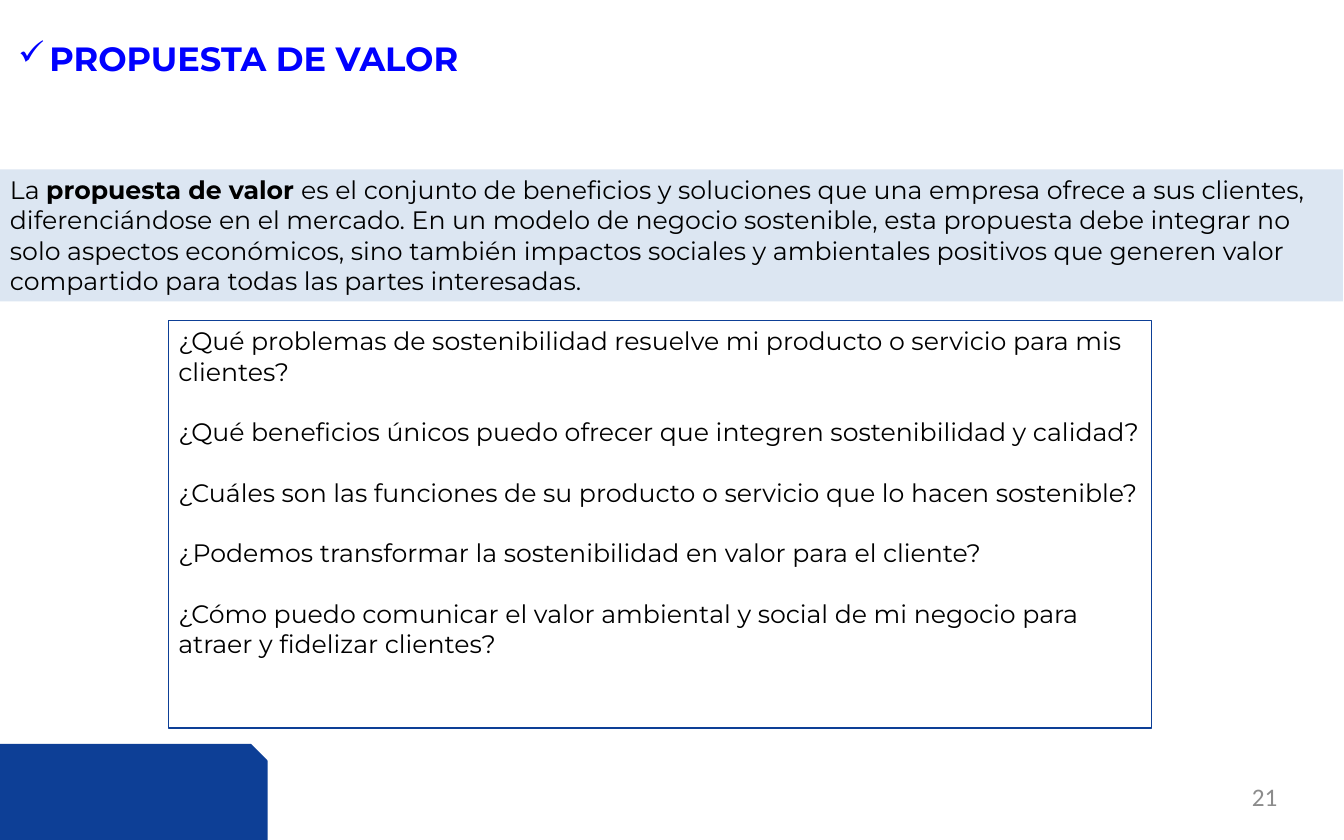
import pptx
import pptx.util
import pptx.dml.color
import pptx.enum.shapes
import pptx.enum.text
import pptx.oxml.ns
import lxml.etree

Inches = pptx.util.Inches
Pt = pptx.util.Pt
SHAPE = pptx.enum.shapes.MSO_SHAPE
ALIGN = pptx.enum.text.PP_ALIGN
TOP = pptx.enum.text.MSO_ANCHOR.TOP

COLORS = {"navy": "0D3F96", "title": "0000FF", "band": "DCE6F2",
          "text": "000000", "number": "8C8C8C"}
QUESTIONS = [
    "¿Qué problemas de sostenibilidad resuelve mi producto o servicio para mis clientes?",
    "¿Qué beneficios únicos puedo ofrecer que integren sostenibilidad y calidad?",
    "¿Cuáles son las funciones de su producto o servicio que lo hacen sostenible?",
    "¿Podemos transformar la sostenibilidad en valor para el cliente?",
    "¿Cómo puedo comunicar el valor ambiental y social de mi negocio para atraer y fidelizar clientes?",
]
DEFINITION = [
    ("La ", False),
    ("propuesta de valor ", True),
    ("es el conjunto de beneficios y soluciones que una empresa ofrece a sus clientes, "
     "diferenciándose en el mercado. En un modelo de negocio sostenible, esta propuesta "
     "debe integrar no solo aspectos económicos, sino también impactos sociales y "
     "ambientales positivos que generen valor compartido para todas las partes "
     "interesadas.", False),
]


def add_panel(kind, left, top, width, height, fill=None, line=None, weight=0.75):
    panel = slide.shapes.add_shape(kind, Inches(left), Inches(top), Inches(width), Inches(height))
    panel.shadow.inherit = False
    if fill:
        panel.fill.solid()
        panel.fill.fore_color.rgb = pptx.dml.color.RGBColor.from_string(COLORS[fill])
    else:
        panel.fill.background()
    if line:
        panel.line.color.rgb = pptx.dml.color.RGBColor.from_string(COLORS[line])
        panel.line.width = Pt(weight)
    else:
        panel.line.fill.background()
    panel.text_frame.word_wrap = True
    panel.text_frame.vertical_anchor = TOP
    return panel


def style_run(run, size=18, color="text", bold=False, font="Montserrat"):
    run.font.name = font
    run.font.size = Pt(size)
    run.font.bold = bold
    run.font.color.rgb = pptx.dml.color.RGBColor.from_string(COLORS[color])


prs = pptx.Presentation()
prs.slide_width = Inches(13.33)
prs.slide_height = Inches(8.33)
slide = prs.slides.add_slide(prs.slide_layouts[5])

# Title with check mark bullet
title = slide.shapes.title
title.left, title.top, title.width, title.height = (Inches(v) for v in (0.08, 0.33, 10.68, 0.5))
title.text_frame.text = "PROPUESTA DE VALOR"
title.text_frame.word_wrap = True
title.text_frame.vertical_anchor = TOP
heading = title.text_frame.paragraphs[0]
heading.alignment = ALIGN.LEFT
heading.space_after = Pt(18)
heading_props = heading._p.get_or_add_pPr()
heading_props.set("marL", str(Inches(0.31)))
heading_props.set("indent", str(-Inches(0.31)))
bullet = lxml.etree.SubElement(heading_props, pptx.oxml.ns.qn("a:buChar"))
bullet.set("char", "✓")
style_run(heading.runs[0], 24, "title", True)

# Page number and corner block
number = slide.shapes.add_textbox(Inches(9.6), Inches(7.75), Inches(3.07), Inches(0.42))
frame = number.text_frame
frame.word_wrap = True
frame.margin_left = frame.margin_right = frame.margin_top = frame.margin_bottom = 0
frame.text = "21"
frame.paragraphs[0].alignment = ALIGN.RIGHT
style_run(frame.paragraphs[0].runs[0], 18, "number", font="Calibri")
add_panel(SHAPE.SNIP_1_RECTANGLE, 0, 7.39, 2.64, 0.94, "navy", "navy", 2)

# Guiding questions, one line apart
questions = add_panel(SHAPE.RECTANGLE, 1.67, 3.18, 9.75, 4.04, line="navy")
questions.text_frame.text = "\n".join(QUESTIONS)
for index, question in enumerate(questions.text_frame.paragraphs):
    question.alignment = ALIGN.LEFT
    if index:
        question.space_before = Pt(21.6)
    style_run(question.runs[0])

# Definition band
definition = add_panel(SHAPE.RECTANGLE, 0, 1.68, 13.32, 1.31, "band")
sentence = definition.text_frame.paragraphs[0]
sentence.alignment = ALIGN.LEFT
for words, bold in DEFINITION:
    run = sentence.add_run()
    run.text = words
    style_run(run, bold=bold)

prs.save("out.pptx")
